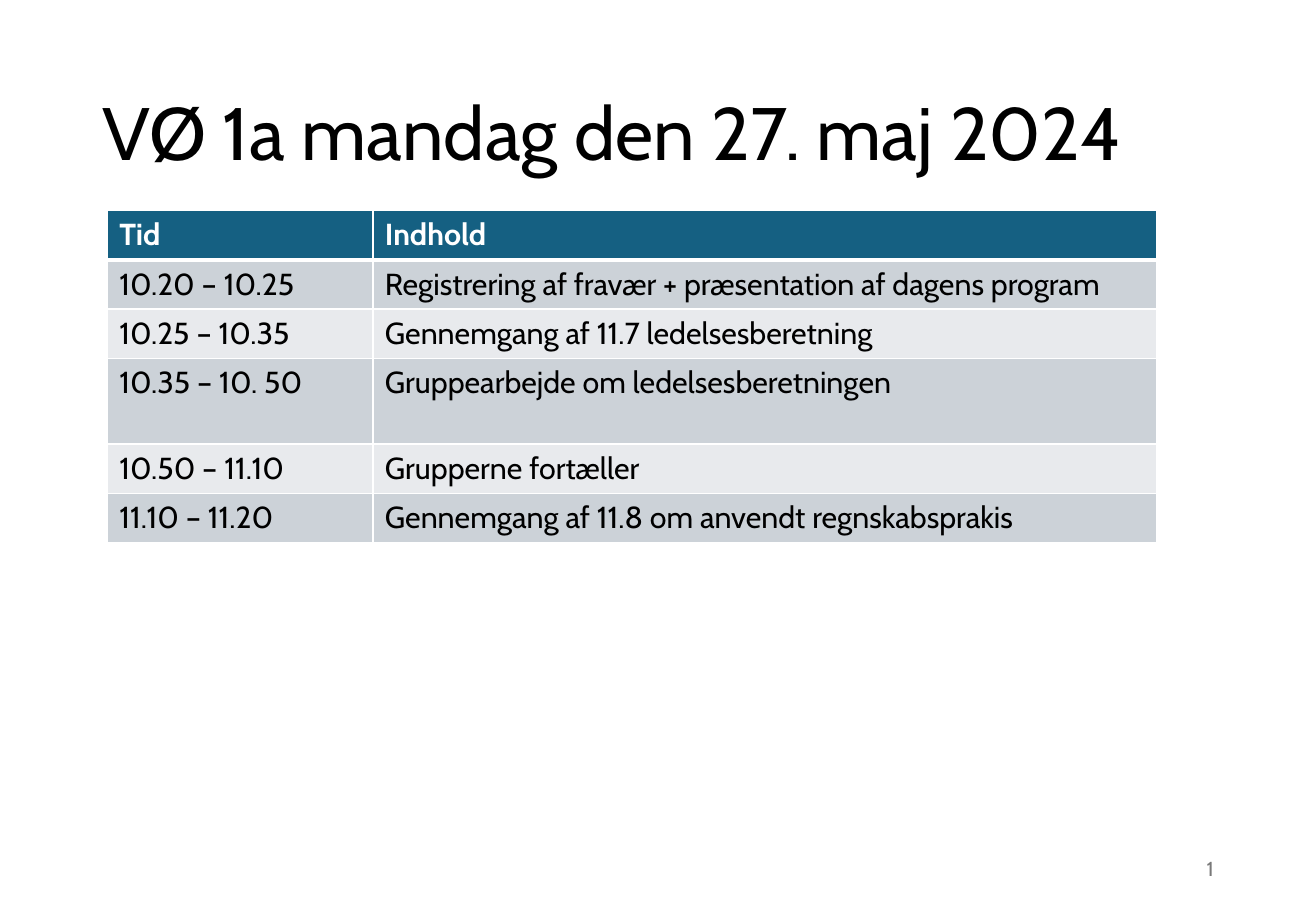
from lxml import etree
from pptx import Presentation
from pptx.dml.color import RGBColor
from pptx.enum.text import MSO_ANCHOR, MSO_AUTO_SIZE, PP_ALIGN
from pptx.oxml import parse_xml
from pptx.oxml.ns import nsdecls, qn
from pptx.util import Pt

MIDDLE = MSO_ANCHOR.MIDDLE
NO_FIT = MSO_AUTO_SIZE.NONE
LEFT, RIGHT = PP_ALIGN.LEFT, PP_ALIGN.RIGHT

TITLE = "VØ 1a mandag den 27. maj 2024"
PAGE_NUMBER = "1"
PROGRAMME = [
    ("Tid", "Indhold"),
    ("10.20 – 10.25", "Registrering af fravær + præsentation af dagens program"),
    ("10.25 – 10.35", "Gennemgang af 11.7 ledelsesberetning"),
    ("10.35 – 10. 50", "Gruppearbejde om ledelsesberetningen"),
    ("10.50 – 11.10", "Grupperne fortæller"),
    ("11.10 – 11.20", "Gennemgang af 11.8 om anvendt regnskabsprakis"),
]
TALL_ROW = 3

THEME = {
    "font": "Cabin",
    "title_size": 44, "table_size": 18, "number_size": 12,
    "text": "000000", "header_text": "FFFFFF", "number": "797979",
    "header": "156082", "bands": ("CCD2D8", "E8EAED"), "border": "FFFFFF",
}

SLIDE_SIZE = (780, 540)
TITLE_BOX = (53.5, 28.8, 672.5, 104.4)
NUMBER_BOX = (551, 500.5, 175.5, 28.8)
TABLE_LEFT, TABLE_TOP = 63.5, 124.8
COLUMN_WIDTHS = (157.5, 464.5)
ROW_HEIGHT, TALL_HEIGHT = 29.2, 50.8
THIN, THICK = 1, 3


def points(values):
    return [Pt(value) for value in values]


def set_font(para, size, color, bold=False):
    font = para.font
    font.name, font.size, font.bold = THEME["font"], Pt(size), bold
    font.color.rgb = RGBColor.from_string(color)


def set_borders(cell, top, bottom):
    """Draw all four cell edges; borders precede the fill in the cell properties."""
    properties = cell._tc.get_or_add_tcPr()
    edges = {"lnL": THIN, "lnR": THIN, "lnT": top, "lnB": bottom}
    for index, (edge, width) in enumerate(edges.items()):
        properties.insert(index, parse_xml(
            f'<a:{edge} {nsdecls("a")} w="{Pt(width)}"><a:solidFill>'
            f'<a:srgbClr val="{THEME["border"]}"/></a:solidFill></a:{edge}>'))


def add_title(page):
    title = page.shapes.title
    title.left, title.top, title.width, title.height = points(TITLE_BOX)
    frame = title.text_frame
    frame.text = TITLE
    frame.word_wrap, frame.auto_size = True, NO_FIT
    frame.vertical_anchor = MIDDLE
    para = frame.paragraphs[0]
    para.alignment, para.line_spacing = LEFT, 0.9
    set_font(para, THEME["title_size"], THEME["text"])


def add_programme(page):
    heights = [TALL_HEIGHT if row == TALL_ROW else ROW_HEIGHT
               for row in range(len(PROGRAMME))]
    table = page.shapes.add_table(
        len(PROGRAMME), len(COLUMN_WIDTHS),
        *points((TABLE_LEFT, TABLE_TOP, sum(COLUMN_WIDTHS), sum(heights)))).table
    for column, width in zip(table.columns, COLUMN_WIDTHS):
        column.width = Pt(width)
    for row, (texts, height) in enumerate(zip(PROGRAMME, heights)):
        table.rows[row].height = Pt(height)
        header = row == 0
        fill = THEME["header"] if header else THEME["bands"][(row - 1) % 2]
        color = THEME["header_text"] if header else THEME["text"]
        for column, text in enumerate(texts):
            cell = table.cell(row, column)
            cell.text = text
            cell.fill.solid()
            cell.fill.fore_color.rgb = RGBColor.from_string(fill)
            set_font(cell.text_frame.paragraphs[0], THEME["table_size"], color, header)
            set_borders(cell, THICK if row == 1 else THIN, THICK if header else THIN)


def add_page_number(page):
    frame = page.shapes.add_textbox(*points(NUMBER_BOX)).text_frame
    frame.word_wrap, frame.vertical_anchor = True, MIDDLE
    para = frame.paragraphs[0]
    para.alignment = RIGHT
    set_font(para, THEME["number_size"], THEME["number"])
    field = etree.SubElement(para._p, qn("a:fld"), type="slidenum",
                             id="{B6F15528-21DE-4FAA-801E-634DDDAF4B2B}")
    etree.SubElement(field, qn("a:rPr"), lang="da-DK")
    etree.SubElement(field, qn("a:t")).text = PAGE_NUMBER


def main():
    deck = Presentation()
    deck.slide_width, deck.slide_height = points(SLIDE_SIZE)
    page = deck.slides.add_slide(deck.slide_layouts.get_by_name("Title Only"))
    add_title(page)
    add_programme(page)
    add_page_number(page)
    deck.save("out.pptx")


if __name__ == "__main__":
    main()
